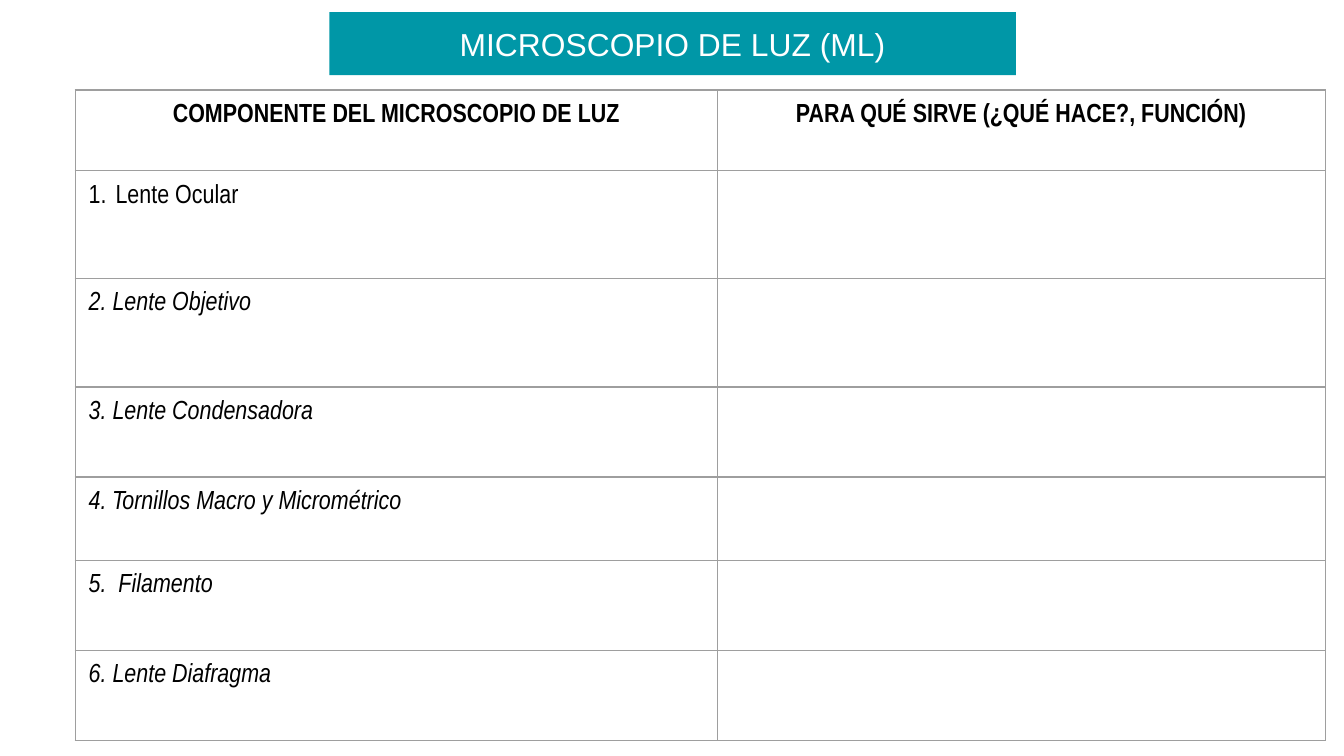
from dataclasses import dataclass

from lxml import etree
from pptx import Presentation
from pptx.dml.color import RGBColor
from pptx.enum.shapes import MSO_SHAPE
from pptx.enum.text import MSO_ANCHOR, PP_ALIGN
from pptx.oxml.ns import qn
from pptx.util import Inches, Pt

RECT = MSO_SHAPE.RECTANGLE
TOP, MIDDLE = MSO_ANCHOR.TOP, MSO_ANCHOR.MIDDLE
LEFT, CENTER = PP_ALIGN.LEFT, PP_ALIGN.CENTER

TEAL = RGBColor(0x00, 0x97, 0xA7)
WHITE = RGBColor(0xFF, 0xFF, 0xFF)
BLACK = RGBColor(0x00, 0x00, 0x00)
GRAY = RGBColor(0x9E, 0x9E, 0x9E)

# 16:9 page
WIDE = Inches(10)
HIGH = WIDE * 9 // 16

PAD = Inches(0.1)
MARGINS = {f"margin_{side}": PAD for side in ("left", "top", "right", "bottom")}
TITLE = {"name": "Arial", "size": Pt(17)}
HEAD = {"name": "Arial Narrow", "size": Pt(14), "bold": True}
BODY = HEAD | {"bold": False}
ITALIC = BODY | {"italic": True}


@dataclass
class Row:
    height: float
    texts: tuple[str, str]
    style: dict
    align: PP_ALIGN = LEFT
    auto: bool = False


ROWS = [
    Row(0.6, ("COMPONENTE DEL MICROSCOPIO DE LUZ",
              "PARA QUÉ SIRVE (¿QUÉ HACE?, FUNCIÓN)"), HEAD, CENTER),
    Row(0.8, ("Lente Ocular", ""), BODY, auto=True),
    Row(0.81, ("2. Lente Objetivo", ""), ITALIC),
    Row(0.67, ("3. Lente Condensadora", ""), ITALIC),
    Row(0.62, ("4. Tornillos Macro y Micrométrico", ""), ITALIC),
    Row(0.67, ("5.  Filamento", ""), ITALIC),
    Row(0.67, ("6. Lente Diafragma", ""), ITALIC),
]
WIDTHS = (4.78, 4.52)


def apply(target, values: dict) -> None:
    for name, value in values.items():
        setattr(target, name, value)


def write(par, text: str, style: dict, color: RGBColor, align: PP_ALIGN) -> None:
    par.alignment = align
    if text:
        run = par.add_run()
        run.text = text
        font = run.font
    else:
        font = par.font
    apply(font, style)
    font.color.rgb = color


def number(par) -> None:
    props = par._p.get_or_add_pPr()
    props.set("marL", str(Inches(0.2)))
    props.set("indent", str(-Inches(0.2)))
    tint = etree.SubElement(props, qn("a:buClr"))
    etree.SubElement(tint, qn("a:srgbClr"), val=str(BLACK))
    etree.SubElement(props, qn("a:buAutoNum"), type="arabicPeriod")


def border(cell) -> None:
    props = cell._tc.get_or_add_tcPr()
    for spot, side in enumerate(("lnL", "lnR", "lnT", "lnB")):
        line = etree.Element(qn(f"a:{side}"), w=str(Pt(0.75)))
        fill = etree.SubElement(line, qn("a:solidFill"))
        etree.SubElement(fill, qn("a:srgbClr"), val=str(GRAY))
        props.insert(spot, line)


def draw_cell(cell, text: str, row: Row) -> None:
    apply(cell, MARGINS | {"vertical_anchor": TOP})
    cell.fill.background()
    border(cell)
    par = cell.text_frame.paragraphs[0]
    write(par, text, row.style, BLACK, row.align)
    if row.auto and text:
        number(par)


def draw_table(slide) -> None:
    frame = slide.shapes.add_table(
        len(ROWS), len(WIDTHS), Inches(0.56), Inches(0.67),
        Inches(sum(WIDTHS)), Inches(sum(row.height for row in ROWS)))
    table = frame.table
    apply(table, {"first_row": False, "horz_banding": False})
    for col, width in zip(table.columns, WIDTHS):
        col.width = Inches(width)
    for line, row in zip(table.rows, ROWS):
        line.height = Inches(row.height)
        for cell, text in zip(line.cells, row.texts):
            draw_cell(cell, text, row)


def draw_title(slide) -> None:
    box = slide.shapes.add_shape(
        RECT, Inches(2.45), Inches(0.09), Inches(5.11), Inches(0.47))
    box.shadow.inherit = False
    box.fill.solid()
    box.fill.fore_color.rgb = TEAL
    box.line.fill.background()
    frame = box.text_frame
    apply(frame, MARGINS | {"word_wrap": True, "vertical_anchor": MIDDLE})
    write(frame.paragraphs[0], "MICROSCOPIO DE LUZ (ML)", TITLE, WHITE, CENTER)


def main() -> None:
    deck = Presentation()
    apply(deck, {"slide_width": WIDE, "slide_height": HIGH})
    slide = deck.slides.add_slide(deck.slide_layouts[6])
    # Component table
    draw_table(slide)
    # Title bar
    draw_title(slide)
    deck.save("out.pptx")


if __name__ == "__main__":
    main()
